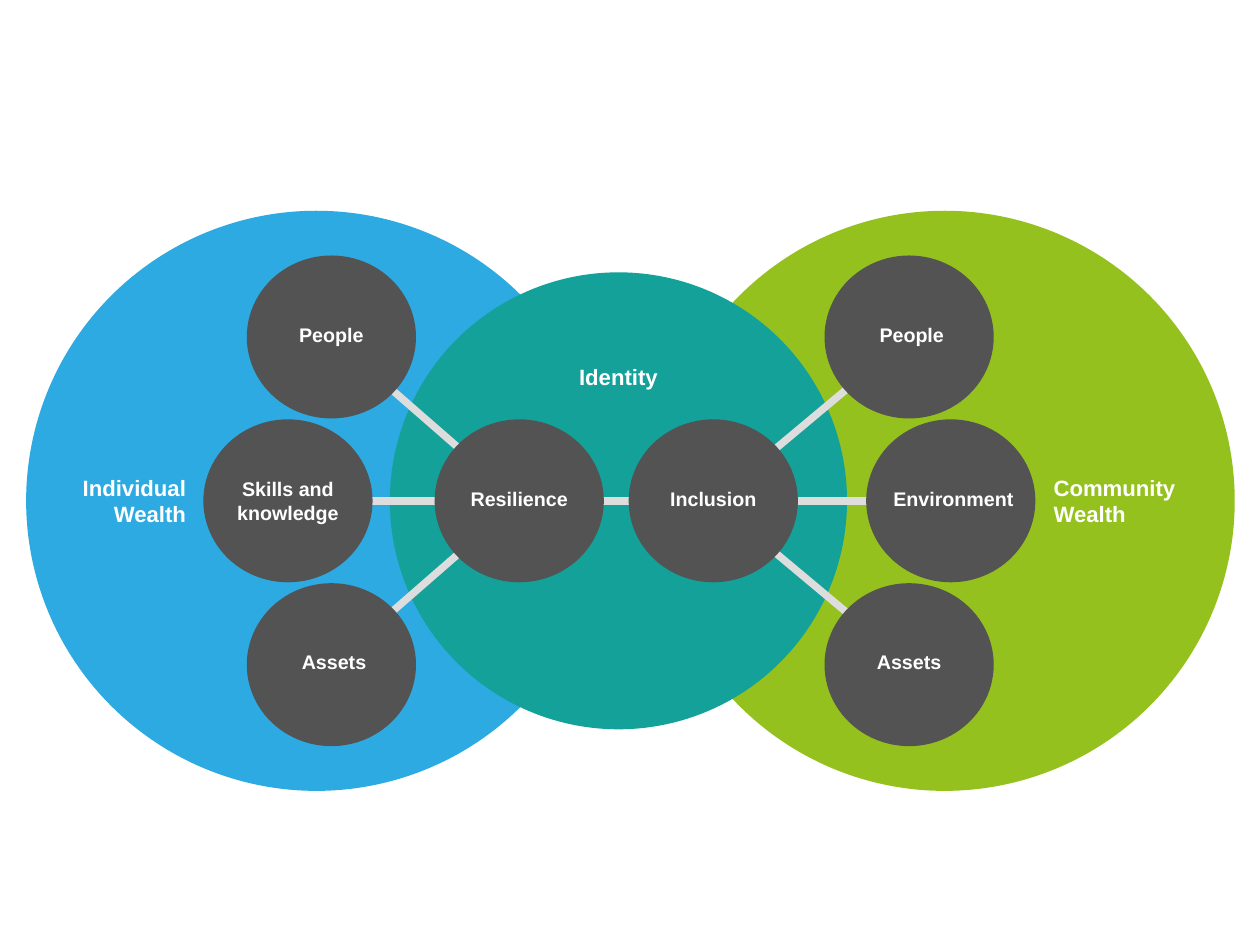
from pptx import Presentation
from pptx.dml.color import RGBColor
from pptx.enum.shapes import MSO_CONNECTOR, MSO_SHAPE
from pptx.enum.text import MSO_ANCHOR, MSO_AUTO_SIZE, PP_ALIGN
from pptx.oxml.ns import qn
from pptx.util import Inches, Pt

OVAL, STRAIGHT = MSO_SHAPE.OVAL, MSO_CONNECTOR.STRAIGHT
LEFT, CENTER, RIGHT = PP_ALIGN.LEFT, PP_ALIGN.CENTER, PP_ALIGN.RIGHT
MIDDLE, GROW = MSO_ANCHOR.MIDDLE, MSO_AUTO_SIZE.SHAPE_TO_FIT_TEXT

BLUE = RGBColor(0x2C, 0xAA, 0xE1)
GREEN = RGBColor(0x94, 0xC1, 0x1E)
TEAL = RGBColor(0x13, 0xA1, 0x99)
GREY = RGBColor(0x53, 0x53, 0x53)
SILVER = RGBColor(0xDD, 0xDD, 0xDD)
WHITE = RGBColor(0xFF, 0xFF, 0xFF)

WIDTH, HEIGHT = 14.22, 10.67
AXIS = HEIGHT * 0.53      # height of the middle row
ROW = 1.85                # distance between rows of topics
NODE_WIDTH, NODE_HEIGHT = 1.91, 1.84
LABEL_RISE = 0.03         # one-line labels sit just above the centre
FONT = "Arial"

# centre x, diameter, colour
SPHERES = [(3.57, 6.55, BLUE), (10.66, 6.55, GREEN), (6.98, 5.16, TEAL)]

# text, centre x, centre y, width, alignment
HEADINGS = [
    ("Individual\nWealth", 1.51, AXIS, 1.18, RIGHT),
    ("Identity", 6.98, 4.25, 0.93, CENTER),
    ("Community\nWealth", 12.6, AXIS, 1.42, LEFT),
]

# hub: text, centre x, label width; topics: text, centre x, row, label width, label shift
BRANCHES = [
    (("Resilience", 5.86, 1.11), [
        ("People", 3.74, -1, 0.74, 0),
        ("Skills and\nknowledge", 3.25, 0, 1.16, 0),
        ("Assets", 3.74, 1, 0.74, 0.03),
    ]),
    (("Inclusion", 8.05, 0.98), [
        ("People", 10.26, -1, 0.74, 0.03),
        ("Environment", 10.73, 0, 1.37, 0.03),
        ("Assets", 10.26, 1, 0.74, 0),
    ]),
]


def add_oval(slide, x, y, width, height, color):
    """Draw a plain oval centred on x, y."""
    oval = slide.shapes.add_shape(OVAL, Inches(x - width / 2), Inches(y - height / 2),
                                  Inches(width), Inches(height))
    oval.shadow.inherit = False
    oval.fill.solid()
    oval.fill.fore_color.rgb = color
    oval.line.fill.background()


def add_label(slide, text, x, y, width, size, align=CENTER):
    """Write bold white text in a box centred on x, y."""
    height = size / 60 * (text.count("\n") + 1)
    box = slide.shapes.add_textbox(Inches(x - width / 2), Inches(y - height / 2),
                                   Inches(width), Inches(height))
    frame = box.text_frame
    frame.margin_left = frame.margin_right = frame.margin_top = frame.margin_bottom = 0
    frame.word_wrap = False
    frame.auto_size = GROW
    frame.vertical_anchor = MIDDLE
    frame.text = text
    for paragraph in frame.paragraphs:
        paragraph.alignment = align
        font = paragraph.runs[0].font
        font.name, font.size, font.bold = FONT, Pt(size), True
        font.color.rgb = WHITE


def add_link(slide, start_x, start_y, end_x, end_y):
    link = slide.shapes.add_connector(STRAIGHT, Inches(start_x), Inches(start_y),
                                      Inches(end_x), Inches(end_y))
    link.line.color.rgb = SILVER
    link.line.width = Pt(6)
    properties = link._element.spPr
    properties.append(properties.makeelement(qn("a:effectLst"), {}))


def add_node(slide, text, x, y, label_width, shift=0):
    add_oval(slide, x, y, NODE_WIDTH, NODE_HEIGHT, GREY)
    rise = 0 if "\n" in text else LABEL_RISE
    add_label(slide, text, x + shift, y - rise, label_width, 16)


def main():
    deck = Presentation()
    deck.slide_width, deck.slide_height = Inches(WIDTH), Inches(HEIGHT)
    slide = deck.slides.add_slide(deck.slide_layouts[6])

    for x, diameter, color in SPHERES:
        add_oval(slide, x, AXIS, diameter, diameter, color)
    for text, x, y, width, align in HEADINGS:
        add_label(slide, text, x, y, width, 18, align)

    resilience_x, inclusion_x = (hub[1] for hub, _ in BRANCHES)
    add_link(slide, resilience_x, AXIS, inclusion_x, AXIS)
    for (_, hub_x, _), topics in BRANCHES:
        for _, x, row, _, _ in topics:
            add_link(slide, hub_x, AXIS, x, AXIS + row * ROW)

    for (hub_text, hub_x, hub_width), topics in BRANCHES:
        add_node(slide, hub_text, hub_x, AXIS, hub_width)
        for text, x, row, width, shift in topics:
            add_node(slide, text, x, AXIS + row * ROW, width, shift)

    deck.save("out.pptx")


if __name__ == "__main__":
    main()
